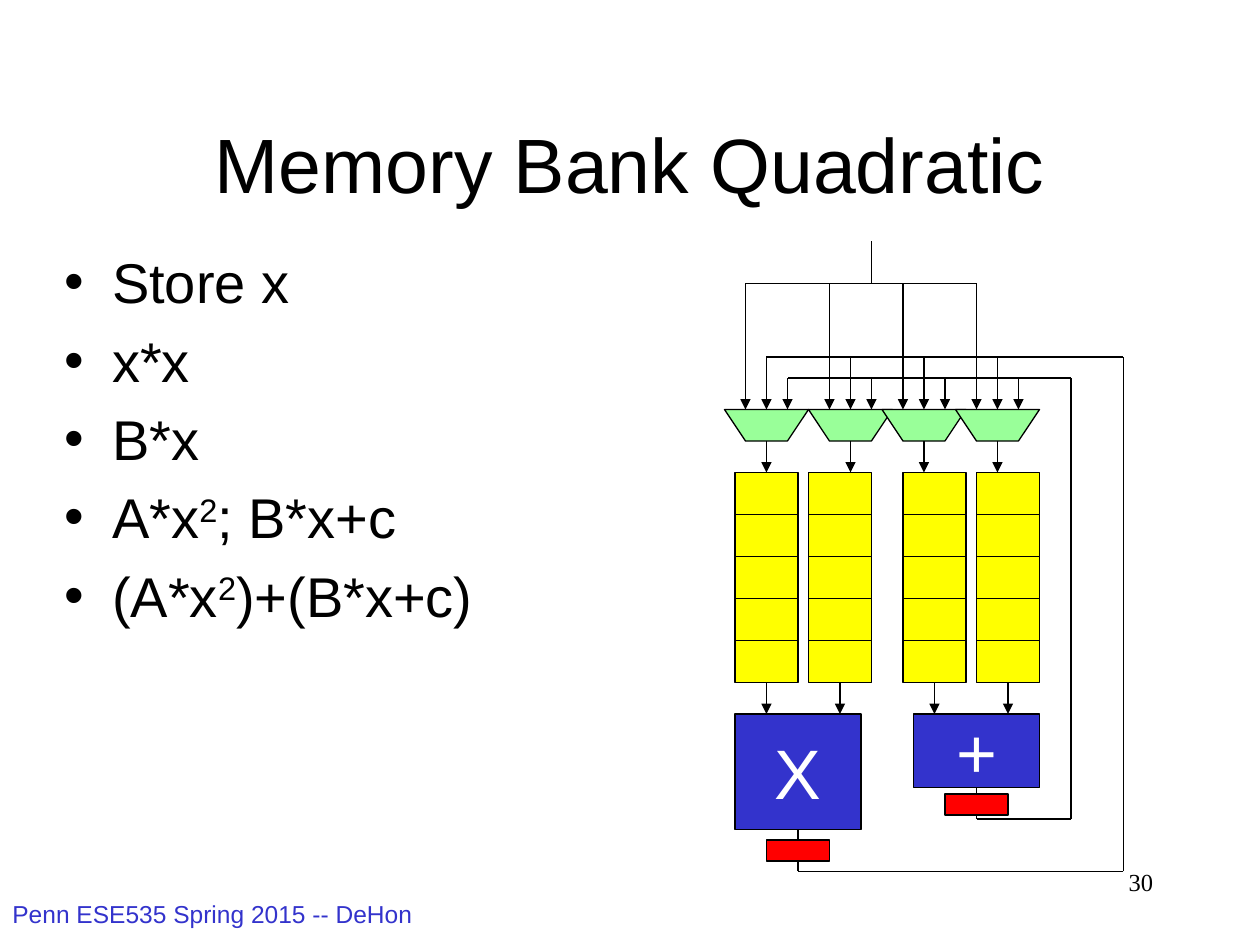
from dataclasses import dataclass

from lxml.etree import SubElement
from pptx import Presentation
from pptx.dml.color import RGBColor as Rgb
from pptx.enum.shapes import MSO_CONNECTOR as Link, MSO_SHAPE as Preset
from pptx.enum.text import MSO_ANCHOR as Anchor, PP_ALIGN as Align
from pptx.oxml.ns import qn
from pptx.util import Pt

PX = 9525
TOP, BOTTOM = 0, 2


@dataclass(frozen=True)
class Theme:
    ink: str = "000000"
    paper: str = "FFFFFF"
    blue: str = "3333CC"
    memory: str = "FFFF00"
    mux: str = "99FF99"
    register: str = "FF0000"
    sans: str = "Arial"
    serif: str = "Times New Roman"
    title: int = 44
    operator: int = 40
    body: int = 32
    small: int = 14
    stroke: float = 0.75


def assign(target, values):
    for name, value in values.items():
        setattr(target, name, value)


class Canvas:
    def __init__(self, slide, theme):
        self.slide = slide
        self.theme = theme

    def add_words(self, paragraph, text, size, color, font=None, raised=False):
        run = paragraph.add_run()
        run.text = text
        assign(run.font, {"name": font or self.theme.sans, "size": Pt(size)})
        run.font.color.rgb = Rgb.from_string(color)
        if raised:
            run._r.get_or_add_rPr().set("baseline", "30000")

    def frame(self, left, top, width, height, anchor=Anchor.TOP):
        box = self.slide.shapes.add_textbox(
            left * PX, top * PX, width * PX, height * PX)
        assign(box.text_frame, {"word_wrap": True, "vertical_anchor": anchor})
        return box.text_frame

    def label(self, bounds, text, size, color, align=Align.LEFT,
              anchor=Anchor.TOP, font=None):
        paragraph = self.frame(*bounds, anchor).paragraphs[0]
        paragraph.alignment = align
        self.add_words(paragraph, text, size, color, font)

    def bullets(self, bounds, items):
        frame = self.frame(*bounds)
        for index, pieces in enumerate(items):
            paragraph = frame.add_paragraph() if index else frame.paragraphs[0]
            props = paragraph._p.get_or_add_pPr()
            props.set("marL", str(36 * PX))
            props.set("indent", str(-36 * PX))
            spacing = SubElement(props, qn("a:spcBef"))
            SubElement(spacing, qn("a:spcPct")).set("val", "20000")
            SubElement(props, qn("a:buFont")).set("typeface", self.theme.sans)
            SubElement(props, qn("a:buChar")).set("char", "•")
            for order, piece in enumerate(pieces):
                self.add_words(paragraph, piece, self.theme.body, self.theme.ink,
                               raised=order % 2 == 1)

    def paint(self, shape, fill):
        shape.shadow.inherit = False
        shape.fill.solid()
        shape.fill.fore_color.rgb = Rgb.from_string(fill)
        shape.line.color.rgb = Rgb.from_string(self.theme.ink)
        shape.line.width = Pt(self.theme.stroke)
        return shape

    def block(self, left, top, width, height, fill, text=""):
        block = self.paint(self.slide.shapes.add_shape(
            Preset.RECTANGLE, left * PX, top * PX, width * PX, height * PX), fill)
        if text:
            assign(block.text_frame,
                   {"word_wrap": False, "vertical_anchor": Anchor.MIDDLE})
            paragraph = block.text_frame.paragraphs[0]
            paragraph.alignment = Align.CENTER
            self.add_words(paragraph, text, self.theme.operator, self.theme.paper)
        return block

    def multiplexer(self, left, top, width, height, inset):
        outline = self.slide.shapes.build_freeform(left, top, scale=PX)
        outline.add_line_segments([
            (left + inset, top + height),
            (left + width - inset, top + height),
            (left + width, top)])
        self.paint(outline.convert_to_shape(), self.theme.mux)

    def wire(self, start, end, arrow=False, source=None, target=None):
        wire = self.slide.shapes.add_connector(
            Link.STRAIGHT, *(value * PX for value in (*start, *end)))
        if source:
            wire.begin_connect(source, BOTTOM)
        if target:
            wire.end_connect(target, TOP)
        wire.line.color.rgb = Rgb.from_string(self.theme.ink)
        wire.line.width = Pt(self.theme.stroke)
        if arrow:
            outline = wire._element.spPr.find(qn("a:ln"))
            SubElement(outline, qn("a:tailEnd")).set("type", "triangle")
        SubElement(wire._element.spPr, qn("a:effectLst"))

    def route(self, points, source=None):
        for start, end in zip(points, points[1:]):
            self.wire(start, end, source=source)
            source = None


def draw_text(canvas, theme):
    canvas.label((0, 680, 368, 40), "Penn ESE535 Spring 2015 -- DeHon",
                 theme.small, theme.blue)
    canvas.label((688, 656, 200, 48), "30", theme.small, theme.ink,
                 Align.RIGHT, font=theme.serif)
    canvas.label((72, 64, 816, 120), "Memory Bank Quadratic", theme.title,
                 theme.ink, Align.CENTER, Anchor.MIDDLE)
    canvas.bullets((40, 184, 816, 432), [
        ["Store x"], ["x*x"], ["B*x"],
        ["A*x", "2", "; B*x+c"],
        ["(A*x", "2", ")+(B*x+c)"]])


def draw_datapath(canvas, theme):
    input_bus, product_bus, sum_bus = 216, 272, 288
    mux_top, mux_width, mux_height, mux_inset = 312, 64, 24, 16
    bank_top, cell_width, cell_height, cell_count = 360, 48, 32, 5
    bank_bottom, unit_top = bank_top + cell_count * cell_height, 544

    multiplier = canvas.block(560, unit_top, 96, 88, theme.blue, "X")
    adder = canvas.block(696, unit_top, 96, 56, theme.blue, "+")

    banks = []
    for left in (560, 616, 688, 744):
        cells = [canvas.block(left, bank_top + row * cell_height,
                              cell_width, cell_height, theme.memory)
                 for row in range(cell_count)]
        banks.append(cells)
        center = left + cell_width // 2
        canvas.wire((center, bank_bottom), (center, unit_top), True, cells[-1])

    for left, cells in zip((552, 616, 672, 728), banks):
        canvas.multiplexer(left, mux_top, mux_width, mux_height, mux_inset)
        center = left + mux_width // 2
        aligned = center * PX == cells[0].left + cells[0].width // 2
        canvas.wire((center, mux_top + mux_height), (center, bank_top), True,
                    target=cells[0] if aligned else None)
        for offset, bus in ((-16, input_bus), (16, sum_bus), (0, product_bus)):
            canvas.wire((center + offset, bus), (center + offset, mux_top), True)

    canvas.wire((568, input_bus), (744, input_bus))
    canvas.wire((664, input_bus), (664, 184))
    canvas.route([(744, 600), (744, 624), (816, 624), (816, sum_bus),
                  (600, sum_bus)], adder)
    canvas.route([(608, 632), (608, 664), (856, 664), (856, product_bus),
                  (584, product_bus)], multiplier)

    for left, top in ((584, 640), (720, 605)):
        canvas.block(left, top, 48, 16, theme.register)


def main():
    deck = Presentation()
    assign(deck, {"slide_width": 960 * PX, "slide_height": 720 * PX})
    theme = Theme()
    canvas = Canvas(deck.slides.add_slide(deck.slide_layouts[6]), theme)
    draw_text(canvas, theme)
    draw_datapath(canvas, theme)
    deck.save("out.pptx")


if __name__ == "__main__":
    main()
